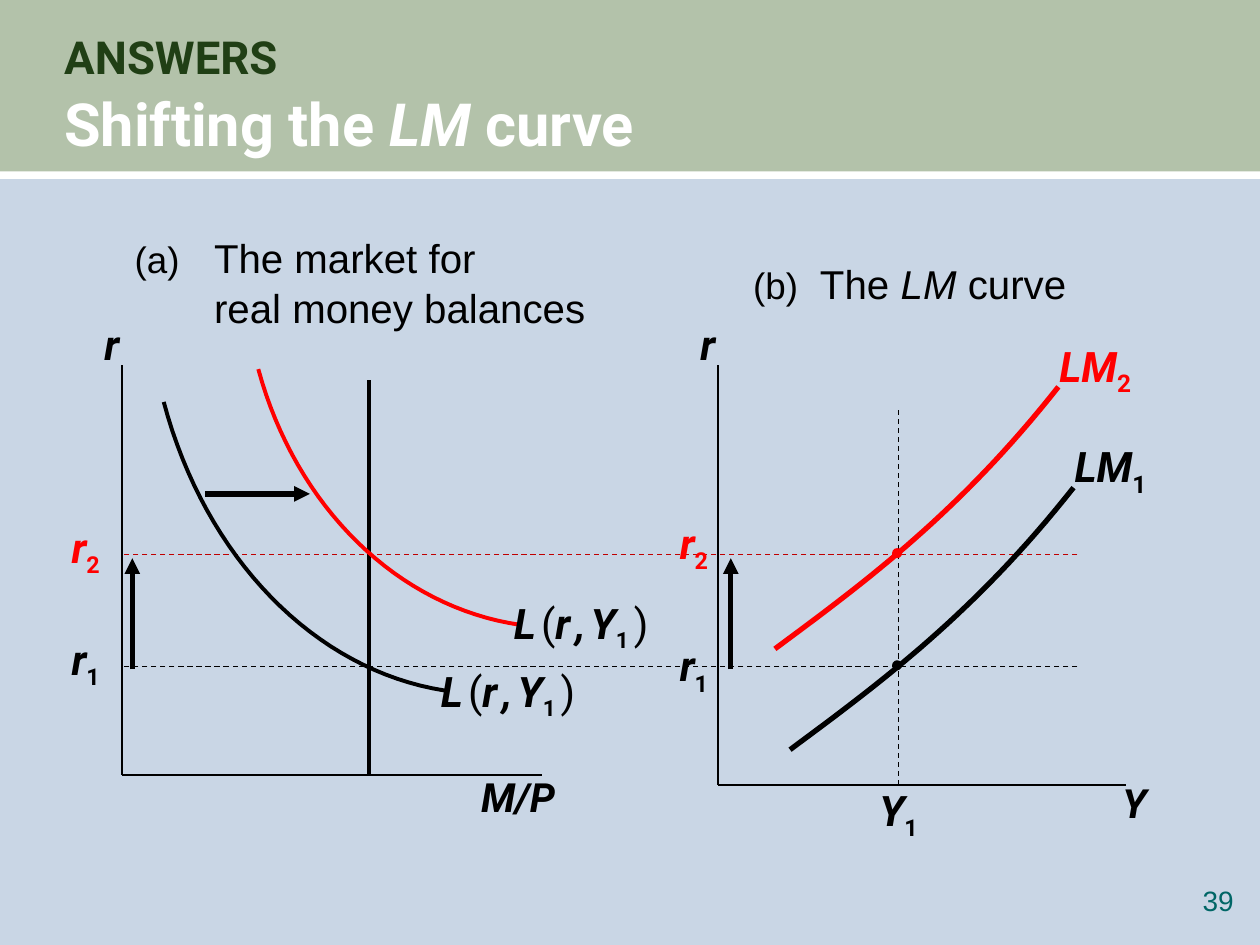
from lxml import etree
from pptx import Presentation
from pptx.dml.color import RGBColor
from pptx.enum.dml import MSO_LINE
from pptx.enum.shapes import MSO_CONNECTOR, MSO_SHAPE
from pptx.enum.text import MSO_ANCHOR, MSO_AUTO_SIZE, PP_ALIGN
from pptx.oxml.ns import qn
from pptx.util import Inches, Pt

BLACK, WHITE = RGBColor(0, 0, 0), RGBColor(255, 255, 255)
RED, CRIMSON = RGBColor(255, 0, 0), RGBColor(0xC0, 0, 0)
SKY, SAGE = RGBColor(0xC9, 0xD6, 0xE5), RGBColor(0xB3, 0xC2, 0xAA)
FOREST, TEAL = RGBColor(0x20, 0x3F, 0x15), RGBColor(0, 0x66, 0x66)
LEFT, RIGHT, MIDDLE = PP_ALIGN.LEFT, PP_ALIGN.RIGHT, MSO_ANCHOR.MIDDLE
RECT, DOT = MSO_SHAPE.RECTANGLE, MSO_SHAPE.OVAL
LINE, DASH = MSO_CONNECTOR.STRAIGHT, MSO_LINE.DASH
FIXED = MSO_AUTO_SIZE.NONE

MATH = dict(name="Roboto", size=24, bold=True, italic=True, color=BLACK)
SUB = dict(size=23, italic=False, base=-25000)
HEAD = dict(name="Arial", size=23, color=BLACK)
GAP, PLAIN = dict(size=12), dict(bold=False, italic=False)
DEMAND = [("L", {}), (" ", GAP), ("(", PLAIN), ("r", {}), (" ", GAP), (",", {}),
          (" ", GAP), ("Y", {}), ("1", {**SUB, "size": 22}), (" ", GAP), (")", PLAIN)]
MARGIN = (0.1, 0.05, 0.1, 0.05)
SNUG = (0.1, 0.05, 0, 0.1)


def write(para, runs, look):
    """Add runs to a paragraph, each with its own changes to the look."""
    for text, change in runs:
        style = {**look, **change}
        if text == "\n":
            para.add_line_break()
            etree.SubElement(para._p[-1], qn("a:rPr"), sz=str(style["size"] * 100))
            continue
        run = para.add_run()
        run.text = text
        for key, value in style.items():
            if key == "color":
                run.font.color.rgb = value
            elif key == "base":
                run._r.get_or_add_rPr().set("baseline", str(value))
            else:
                setattr(run.font, key, Pt(value) if key == "size" else value)


def frame(shape, inset):
    """Set up the text frame of a shape and return its first paragraph."""
    text = shape.text_frame
    sides = ("margin_left", "margin_top", "margin_right", "margin_bottom")
    for side, size in zip(sides, inset):
        setattr(text, side, Inches(size))
    text.word_wrap, text.auto_size = True, FIXED
    return text.paragraphs[0]


def label(slide, box, runs, look=MATH, inset=MARGIN, align=LEFT, space=1.0, indent=0):
    """Place a text box and return nothing."""
    para = frame(slide.shapes.add_textbox(*map(Inches, box)), inset)
    para.alignment, para.line_spacing = align, space
    if indent:
        props = para._p.get_or_add_pPr()
        props.set("marL", str(Inches(indent)))
        props.set("indent", str(-Inches(indent)))
    write(para, runs, look)


def block(slide, kind, box, color):
    """Place a plain filled shape."""
    shape = slide.shapes.add_shape(kind, *map(Inches, box))
    shape.shadow.inherit = False
    shape.fill.solid()
    shape.fill.fore_color.rgb = color
    shape.line.fill.background()


def stroke(slide, start, end, width, color=BLACK, dash=None, arrow=False):
    """Draw a straight line between two points."""
    link = slide.shapes.add_connector(LINE, *map(Inches, (*start, *end)))
    link.line.color.rgb, link.line.width = color, Pt(width)
    if dash:
        link.line.dash_style = dash
    props = link._element.spPr
    if arrow:
        etree.SubElement(props.find(qn("a:ln")), qn("a:tailEnd"), type="triangle")
    etree.SubElement(props, qn("a:effectLst"))


def curve(slide, points, width, color, steps=32):
    """Draw a cubic curve from its four control points."""
    def spot(t):
        parts = ((1 - t) ** 3, 3 * t * (1 - t) ** 2, 3 * t * t * (1 - t), t ** 3)
        return tuple(Inches(sum(w * p[i] for w, p in zip(parts, points))) for i in (0, 1))

    path = [spot(n / steps) for n in range(steps + 1)]
    pen = slide.shapes.build_freeform(*path[0], scale=1.0)
    pen.add_line_segments(path[1:], close=False)
    shape = pen.convert_to_shape()
    shape.shadow.inherit = False
    shape.fill.background()
    shape.line.color.rgb, shape.line.width = color, Pt(width)


def header(slide, box):
    """Draw the title band and fill the title placeholder."""
    x, y, w, h = box
    block(slide, RECT, box, SAGE)
    block(slide, RECT, (x, y + h - 0.04, w, 0.06), WHITE)
    title = slide.shapes.title
    slide.shapes._spTree.append(title._element)
    place = (x + 0.51, y + 0.22, w - 0.98, 1.03)
    for key, value in zip(("left", "top", "width", "height"), place):
        setattr(title, key, Inches(value))
    para = frame(title, (0, 0, 0, 0))
    title.text_frame.vertical_anchor = MIDDLE
    para.alignment, para.line_spacing = LEFT, 1.05
    small = dict(size=26, color=FOREST)
    write(para, [("ANSWERS", small), ("\n", small), ("Shifting the ", {}),
                 ("LM", dict(italic=True)), (" curve", {})],
          dict(name="Roboto", size=34, bold=True, italic=False, color=WHITE))


def axes(slide, box, shift):
    """Draw the axes, the rate label and the arrow for the rise in r."""
    x, y, w, h = box
    stroke(slide, (x, y), (x, y + h), 1)
    stroke(slide, (x, y + h), (x + w, y + h), 1)
    label(slide, (x - 0.24, y - 0.42, 0.5, 0.5), [("r", {})])
    stroke(slide, (x + shift, y + 2.41), (x + shift, y + 1.53), 3, arrow=True)


def rates(slide, box, drop, align):
    """Label the two interest rates, the higher one in red."""
    x, y, w, h = box
    for step, digit, color in ((0, "2", RED), (drop, "1", BLACK)):
        label(slide, (x, y + step, w, h), [("r", {}), (digit, SUB)],
              {**MATH, "color": color}, SNUG, align)


def money(slide, box):
    """Draw the market for real money balances."""
    x, y, w, h = box
    axes(slide, box, 0.08)
    label(slide, (x, y - 1.12, 3.92, 0.87),
          [("(a)", dict(size=21)), ("\tThe market for", {}), ("\n", {}),
           ("real money balances", {})], HEAD, space=1.05, indent=0.63)
    label(slide, (x + 2.75, y + h - 0.07, 1, 0.48), [("M/P", dict(size=23))])
    stroke(slide, (x + 1.96, y + h), (x + 1.96, y + 0.12), 2.25)
    for color, points, spot in (
            (BLACK, ((2.56, 2.58), (1.53, 2.42), (0.66, 1.53), (0.33, 0.29)), (2.43, 2.33)),
            (RED, ((3.16, 2.06), (2.19, 1.92), (1.38, 1.13), (1.08, 0.03)), (3.01, 1.79))):
        curve(slide, [(x + a, y + b) for a, b in points], 2.25, color)
        label(slide, (x + spot[0], y + spot[1], 1.65, 0.5), DEMAND)
    rates(slide, (x - 0.5, y + 1.19, 0.5, 0.55), 0.89, LEFT)
    stroke(slide, (x + 0.66, y + 1.02), (x + 1.49, y + 1.02), 3, arrow=True)


def output(slide, box):
    """Draw the shifting LM curve."""
    x, y, w, h = box
    axes(slide, box, 0.1)
    label(slide, (x + 0.18, y - 0.91, 3, 0.48),
          [("(b)", dict(size=21)), ("\tThe ", {}), ("LM", dict(italic=True)), (" curve", {})],
          HEAD, space=1.05, indent=0.53)
    label(slide, (x + 3.11, y + h - 0.1, 0.5, 0.48), [("Y", dict(size=23))])
    stroke(slide, (x + 1.43, y + h), (x + 1.43, y + 0.33), 0.75, dash=DASH)
    label(slide, (x + 1.18, y + h - 0.05, 0.58, 0.55), [("Y", {}), ("1", SUB)])
    rates(slide, (x - 0.49, y + 1.16, 0.41, 0.55), 0.97, RIGHT)
    shape = ((0, 2.08), (0.73, 1.54), (1.47, 0.99), (2.25, 0))
    for digit, color, left, top, dot in (("1", BLACK, 0.57, 0.97, 2.34),
                                         ("2", RED, 0.45, 0.17, 1.45)):
        curve(slide, [(x + left + a, y + top + b) for a, b in shape], 3, color)
        label(slide, (x + left + 2.16, y + top - 0.42, 0.83, 0.5),
              [("LM", {}), (digit, {**SUB, "size": 24})], {**MATH, "color": color})
        block(slide, DOT, (x + 1.38, y + dot, 0.08, 0.08), color)


def levels(slide, box):
    """Draw the dashed rate lines across both panels."""
    x, y, w, h = box
    for level, color in ((y, CRIMSON), (y + h, BLACK)):
        stroke(slide, (x + w, level), (x, level), 0.75, color, DASH)


def main():
    """Build and save the slide."""
    deck = Presentation()
    deck.slide_width, deck.slide_height = Inches(10), Inches(7.5)
    slide = deck.slides.add_slide(deck.slide_layouts[5])
    slide.background.fill.solid()
    slide.background.fill.fore_color.rgb = SKY
    header(slide, (0, 0, 10, 1.4))
    levels(slide, (0.96, 4.4, 7.59, 0.89))
    money(slide, (0.97, 2.9, 3.33, 3.25))
    output(slide, (5.7, 2.9, 3.24, 3.33))
    label(slide, (9.24, 7.01, 0.55, 0.32), [("39", {})],
          dict(name="Arial", size=16, color=TEAL), (0, 0, 0, 0), RIGHT)
    deck.save("out.pptx")


if __name__ == "__main__":
    main()
